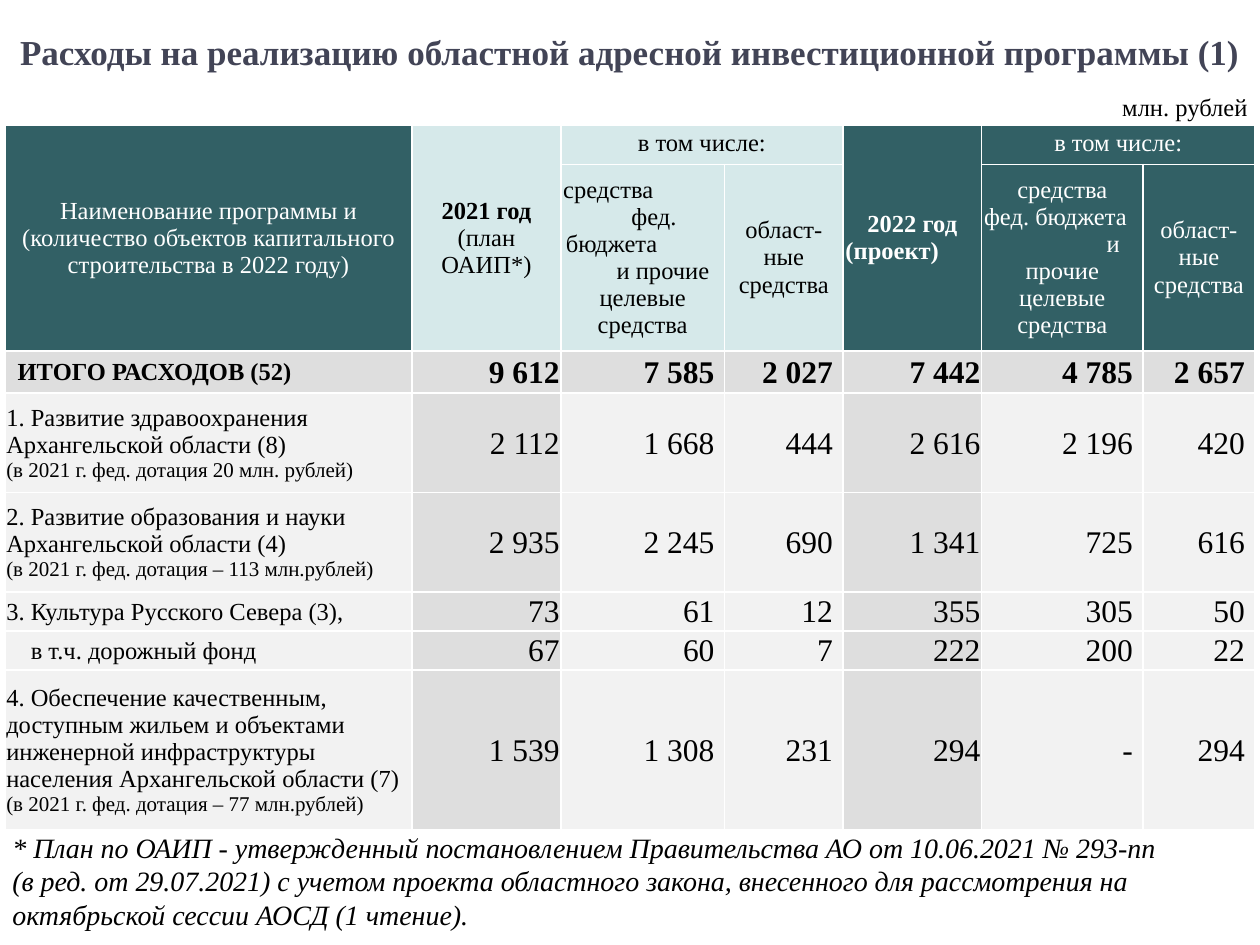
from lxml.etree import SubElement
from pptx import Presentation
from pptx.dml.color import RGBColor
from pptx.enum.text import MSO_ANCHOR as ANCHOR, PP_ALIGN as ALIGN
from pptx.oxml.ns import qn
from pptx.util import Pt

FONT = "Times New Roman"
WHITE = RGBColor(0xFF, 0xFF, 0xFF)
BLACK = RGBColor(0, 0, 0)
SLATE = RGBColor(0x42, 0x44, 0x56)
TEAL = RGBColor(0x32, 0x60, 0x65)
PALE_TEAL = RGBColor(0xD6, 0xE9, 0xEA)
GREY = RGBColor(0xDE, 0xDE, 0xDE)
LIGHT = RGBColor(0xF2, 0xF2, 0xF2)

COL_WIDTHS = [232.6, 85, 93.6, 67.7, 79.2, 92.2, 64]
ROW_HEIGHTS = [22.3, 106.3, 24, 56.8, 56.8, 22.3, 22.3, 91.4]
YEAR_COLS = (1, 4)
HEADER_INSETS = (1.4, 2.9, 1.4, 2.9)
WIDE_INSETS = (7.2, 3.6, 7.2, 3.6)
TIGHT_INSETS = (0.7, 0.7, 0.7, 0)
VALUE_INSETS = (0.7, 0.7, 5.8, 0)

PROGRAMS = [
    ("1. Развитие здравоохранения Архангельской области (8)",
     "(в 2021 г. фед. дотация 20 млн. рублей)", 0,
     ["2 112", "1 668", "444", "2 616", "2 196", "420"]),
    ("2. Развитие образования и науки Архангельской области (4)",
     "(в 2021 г. фед. дотация – 113 млн.рублей)", 0,
     ["2 935", "2 245", "690", "1 341", "725", "616"]),
    ("3. Культура Русского Севера (3),", None, 0,
     ["73", "61", "12", "355", "305", "50"]),
    ("в т.ч. дорожный фонд", None, 14,
     ["67", "60", "7", "222", "200", "22"]),
    ("4. Обеспечение качественным, доступным жильем и объектами инженерной "
     "инфраструктуры населения Архангельской области (7)",
     "(в 2021 г. фед. дотация – 77 млн.рублей)", 0,
     ["1 539", "1 308", "231", "294", "-", "294"]),
]
TOTALS = ["9 612", "7 585", "2 027", "7 442", "4 785", "2 657"]


def write(p, text, size=14, color=BLACK, bold=False, italic=False,
          align=ALIGN.LEFT, indent=0, before=0):
    p.alignment = align
    p.space_before = Pt(before)
    if indent:
        p._p.get_or_add_pPr().set("marL", str(Pt(indent)))
    for i, line in enumerate(text.split("\n")):
        if i:
            p.add_line_break()
        r = p.add_run()
        r.text = line
        f = r.font
        f.name, f.size, f.bold, f.italic = FONT, Pt(size), bold, italic
        f.color.rgb = color


def para(text, **fmt):
    return text, fmt


def centred(text, **fmt):
    return para(text, align=ALIGN.CENTER, **fmt)


class SlideBuilder:
    def __init__(self, slide, border=WHITE, border_width=1):
        self.slide = slide
        self.border = border
        self.border_width = border_width

    def fill_text(self, tf, paras):
        for i, (text, fmt) in enumerate(paras):
            write(tf.add_paragraph() if i else tf.paragraphs[0], text, **fmt)

    def text(self, x, y, w, h, paras, top=3.6):
        tf = self.slide.shapes.add_textbox(Pt(x), Pt(y), Pt(w), Pt(h)).text_frame
        tf.word_wrap = True
        tf.margin_top = Pt(top)
        self.fill_text(tf, paras)

    def table(self, x, y, widths, heights):
        frame = self.slide.shapes.add_table(
            len(heights), len(widths), Pt(x), Pt(y), Pt(sum(widths)), Pt(sum(heights)))
        table = frame.table
        table.first_row = table.horz_banding = False
        for col, w in zip(table.columns, widths):
            col.width = Pt(w)
        for row, h in zip(table.rows, heights):
            row.height = Pt(h)
        return table

    def outline(self, cell):
        tc_pr = cell._tc.get_or_add_tcPr()
        for tag in ("a:lnL", "a:lnR", "a:lnT", "a:lnB"):
            ln = SubElement(tc_pr, qn(tag), w=str(Pt(self.border_width)))
            SubElement(SubElement(ln, qn("a:solidFill")), qn("a:srgbClr"),
                       val=str(self.border))

    def cell(self, table, row, col, paras, fill, insets, span=(1, 1),
             anchor=ANCHOR.MIDDLE):
        c = table.cell(row, col)
        if span != (1, 1):
            c.merge(table.cell(row + span[0] - 1, col + span[1] - 1))
        for i in range(row, row + span[0]):
            for j in range(col, col + span[1]):
                part = table.cell(i, j)
                self.outline(part)
                part.fill.solid()
                part.fill.fore_color.rgb = fill
        c.margin_left, c.margin_top, c.margin_right, c.margin_bottom = map(Pt, insets)
        c.vertical_anchor = anchor
        self.fill_text(c.text_frame, paras)

    def values(self, table, row, values, fill, bold=False):
        for col, value in enumerate(values, 1):
            year = col in YEAR_COLS
            self.cell(table, row, col,
                      [para(value, size=18, bold=bold, align=ALIGN.RIGHT)],
                      GREY if year else fill,
                      TIGHT_INSETS if year else VALUE_INSETS)


def add_header(s, table):
    s.cell(table, 0, 0,
           [centred("Наименование программы и (количество объектов капитального "
                    "строительства в 2022 году)", color=WHITE)],
           TEAL, WIDE_INSETS, (2, 1))
    groups = [
        (1, PALE_TEAL, BLACK,
         [centred("2021 год", bold=True), centred("(план ОАИП*)")],
         [para("средства"), para("фед.", indent=39), para("бюджета", indent=1.5),
          para("и прочие", indent=30.5), centred("целевые средства")]),
        (4, TEAL, WHITE,
         [centred("2022 год", bold=True), para("(проект)", bold=True)],
         [centred("средства"), para("фед. бюджета"), para("и", indent=70),
          centred("прочие целевые средства")]),
    ]
    for col, fill, color, year, federal in groups:
        def tint(paras):
            return [(text, dict(fmt, color=color)) for text, fmt in paras]

        s.cell(table, 0, col, tint(year), fill, HEADER_INSETS, (2, 1))
        s.cell(table, 0, col + 1, tint([centred("в том числе:")]), fill,
               HEADER_INSETS, (1, 2), ANCHOR.TOP)
        s.cell(table, 1, col + 1, tint(federal), fill, HEADER_INSETS)
        s.cell(table, 1, col + 2, tint([centred("област-ные средства")]), fill,
               HEADER_INSETS)


def main():
    prs = Presentation()
    prs.slide_width, prs.slide_height = Pt(720), Pt(540)
    s = SlideBuilder(prs.slides.add_slide(prs.slide_layouts[6]))

    s.text(0, 0, 720, 71.3, [
        centred("Расходы на реализацию областной адресной инвестиционной программы (1)",
                size=20, bold=True, color=SLATE),
        para("млн. рублей", align=ALIGN.RIGHT, before=11),
    ], top=17.5)

    table = s.table(2.9, 71.3, COL_WIDTHS, ROW_HEIGHTS)
    add_header(s, table)
    s.cell(table, 2, 0, [para("ИТОГО РАСХОДОВ (52)", bold=True)], GREY, WIDE_INSETS)
    s.values(table, 2, TOTALS, GREY, bold=True)
    for row, (name, note, indent, values) in enumerate(PROGRAMS, 3):
        paras = [para(name, indent=indent)]
        if note:
            paras.append(para(note, size=12))
        s.cell(table, row, 0, paras, LIGHT, TIGHT_INSETS)
        s.values(table, row, values, LIGHT)

    s.text(0, 470.9, 720, 65.5, [
        para("* План по ОАИП - утвержденный постановлением Правительства АО "
             "от 10.06.2021 № 293-пп\n(в ред. от 29.07.2021) с учетом проекта "
             "областного закона, внесенного для рассмотрения на октябрьской "
             "сессии АОСД (1 чтение).", size=16, italic=True)])
    prs.save("out.pptx")


if __name__ == "__main__":
    main()
